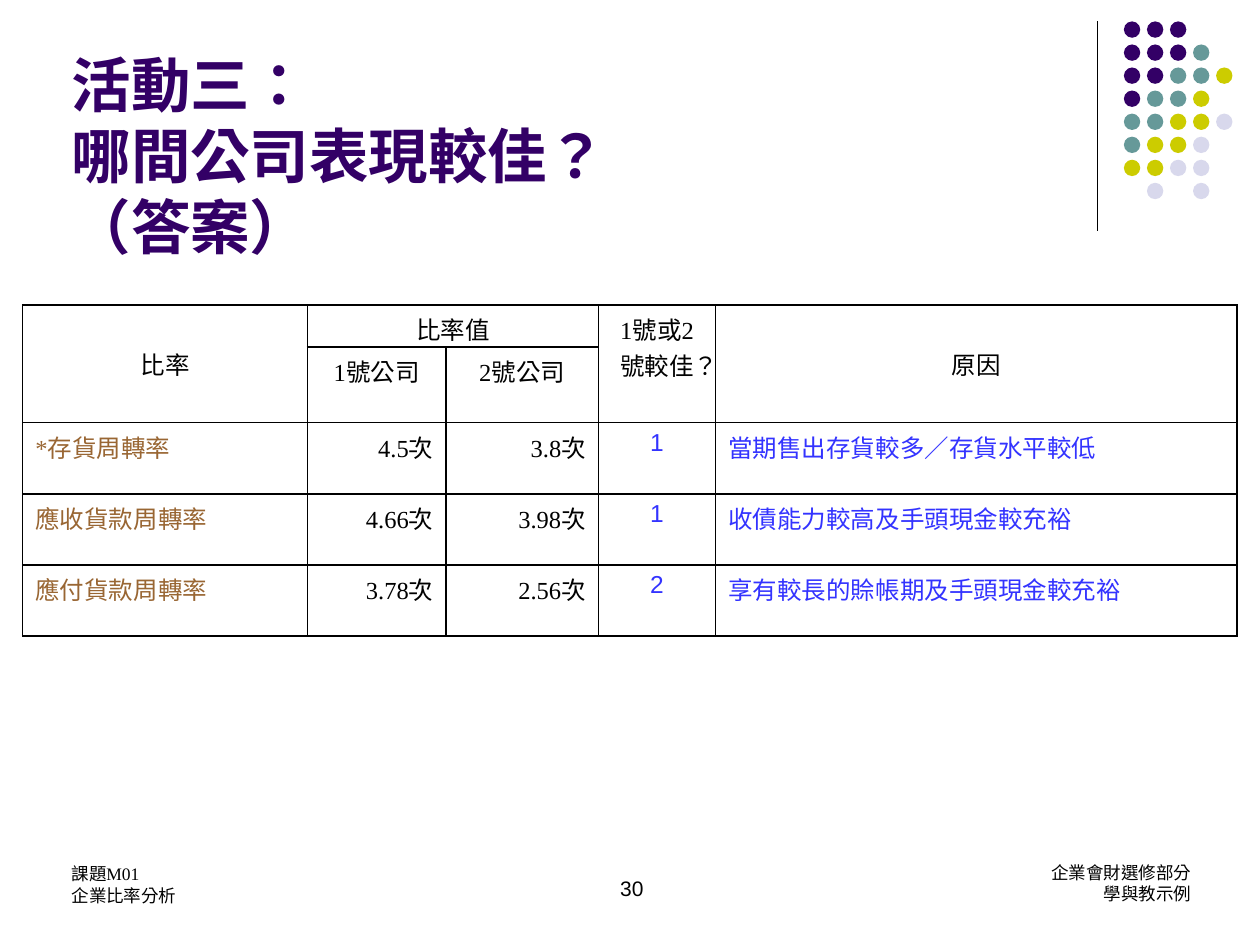
from lxml import etree
from pptx import Presentation
from pptx.dml.color import RGBColor
from pptx.enum.lang import MSO_LANGUAGE_ID
from pptx.enum.shapes import MSO_CONNECTOR, MSO_SHAPE
from pptx.enum.text import MSO_ANCHOR, PP_ALIGN
from pptx.oxml.ns import qn
from pptx.util import Inches, Pt

BLACK = RGBColor(0x00, 0x00, 0x00)
WHITE = RGBColor(0xFF, 0xFF, 0xFF)
PURPLE = RGBColor(0x33, 0x00, 0x66)
TEAL = RGBColor(0x66, 0x99, 0x99)
OLIVE = RGBColor(0xCC, 0xCC, 0x00)
LILAC = RGBColor(0xD8, 0xD8, 0xEC)
BROWN = RGBColor(0x99, 0x66, 0x33)
BLUE = RGBColor(0x33, 0x33, 0xFF)

LEFT, CENTER, RIGHT = PP_ALIGN.LEFT, PP_ALIGN.CENTER, PP_ALIGN.RIGHT
TOP, MIDDLE, BOTTOM = MSO_ANCHOR.TOP, MSO_ANCHOR.MIDDLE, MSO_ANCHOR.BOTTOM
CHINESE = MSO_LANGUAGE_ID.TRADITIONAL_CHINESE
SERIF, SANS, COMIC = "Times New Roman", "Arial", "Comic Neue"

# The slide is a grid of 100 columns by 75 rows
COLUMNS, ROWS = 100, 75


def write(frame, *paragraphs, size=14, font=SERIF, color=BLACK, bold=False,
          align=LEFT, line=None, before=None):
    """Each paragraph is a text or a list of (text, font) parts."""
    for index, content in enumerate(paragraphs):
        paragraph = frame.paragraphs[0] if index == 0 else frame.add_paragraph()
        paragraph.alignment = align
        if line:
            paragraph.line_spacing = Pt(line)
        if before:
            paragraph.space_before = Pt(before)
        parts = [(content, font)] if isinstance(content, str) else content
        for text, face in parts:
            run = paragraph.add_run()
            run.text = text
            run.font.name, run.font.size, run.font.bold = face, Pt(size), bold
            run.font.color.rgb = color
            run.font.language_id = CHINESE


class Deck:
    """Holds the grid, the common style and the current slide."""
    border_width = 1

    def __init__(self, width, height):
        self.file = Presentation()
        self.file.slide_width, self.file.slide_height = Inches(width), Inches(height)
        self.column = self.file.slide_width / COLUMNS
        self.row = self.file.slide_height / ROWS
        self.slide = self.file.slides.add_slide(self.file.slide_layouts[6])
        self.shapes = self.slide.shapes

    def place(self, x, y, w, h):
        return (round(x * self.column), round(y * self.row),
                round(w * self.column), round(h * self.row))

    def rule(self, x, top, bottom, color=BLACK, width=0.75):
        left, start, _, length = self.place(x, top, 0, bottom - top)
        rule = self.shapes.add_connector(
            MSO_CONNECTOR.STRAIGHT, left, start, left, start + length)
        rule.line.color.rgb, rule.line.width = color, Pt(width)
        etree.SubElement(rule._element.spPr, qn("a:effectLst"))

    def dot(self, x, y, size, color):
        dot = self.shapes.add_shape(MSO_SHAPE.OVAL, *self.place(x, y, size, size))
        dot.shadow.inherit = False
        dot.fill.solid()
        dot.fill.fore_color.rgb = color
        dot.line.fill.background()

    def text(self, box, *paragraphs, anchor=TOP, wrap=True, **style):
        frame = self.shapes.add_textbox(*self.place(*box)).text_frame
        frame.word_wrap, frame.vertical_anchor = wrap, anchor
        write(frame, *paragraphs, **style)

    def table(self, x, y, widths, heights):
        box = self.place(x, y, sum(widths), sum(heights))
        table = self.shapes.add_table(len(heights), len(widths), *box).table
        table.first_row = table.horz_banding = False
        for column, width in zip(table.columns, widths):
            column.width = round(width * self.column)
        for row, height in zip(table.rows, heights):
            row.height = round(height * self.row)
        for cell in table.iter_cells():
            self.border(cell)
            cell.fill.solid()
            cell.fill.fore_color.rgb = WHITE
        return table

    def border(self, cell):
        properties = cell._tc.get_or_add_tcPr()
        for side in ("a:lnL", "a:lnR", "a:lnT", "a:lnB"):
            edge = etree.SubElement(properties, qn(side), w=str(Pt(self.border_width)))
            fill = etree.SubElement(edge, qn("a:solidFill"))
            etree.SubElement(fill, qn("a:srgbClr"), val=str(BLACK))


def decorate(deck):
    deck.rule(87.1, 1.7, 18.3)
    colors = {"P": PURPLE, "T": TEAL, "O": OLIVE, "L": LILAC}
    pattern = ("PPP..", "PPPT.", "PPTTO", "PTTO.", "TTOOL", "TOOL.", "OOLL.", ".L.L.")
    for row, marks in enumerate(pattern):
        for column, mark in enumerate(marks):
            if mark in colors:
                deck.dot(89.2 + 1.83 * column, 1.7 + 1.83 * row, 1.3, colors[mark])


def add_ratios(deck):
    table = deck.table(1.8, 24.2, (22.6, 11, 12.1, 9.3, 41.4),
                       (3.3, 6, 5.65, 5.65, 5.65))

    # Headings: row, column, last row, last column, text, anchor, font
    headings = (
        (0, 0, 1, 0, "比率", MIDDLE, SANS),
        (0, 1, 0, 2, "比率值", TOP, SERIF),
        (0, 3, 1, 3, "1號或2號較佳？", TOP, SERIF),
        (0, 4, 1, 4, "原因", MIDDLE, SERIF),
        (1, 1, 1, 1, "1號公司", TOP, SERIF),
        (1, 2, 1, 2, "2號公司", TOP, SERIF),
    )
    for row, column, last_row, last_column, label, anchor, font in headings:
        heading = table.cell(row, column)
        if (row, column) != (last_row, last_column):
            heading.merge(table.cell(last_row, last_column))
        heading.vertical_anchor = anchor
        write(heading.text_frame, label, font=font, align=CENTER)

    # Ratios: name, value of each company, better company, reason
    ratios = (
        ([("*", SERIF), ("存貨周轉率", COMIC)], "4.5次", "3.8次", "1",
         [("當期售出存貨較多／存貨水平較低", SANS)]),
        ([("應收貨款", COMIC), ("周轉率", SERIF)], "4.66次", "3.98次", "1",
         [("收債能力較高及手頭現金較充裕", COMIC)]),
        ([("應付貨款", COMIC), ("周轉率", SERIF)], "3.78次", "2.56次", "2",
         [("享有較長的賒帳期及手頭現金較充裕", COMIC)]),
    )
    styles = (
        dict(color=BROWN),
        dict(align=RIGHT),
        dict(align=RIGHT),
        dict(align=CENTER, font=SANS, color=BLUE, before=2.8),
        dict(color=BLUE),
    )
    for row, ratio in enumerate(ratios, start=2):
        for column, (content, style) in enumerate(zip(ratio, styles)):
            write(table.cell(row, column).text_frame, content, **style)


def main():
    deck = Deck(10, 7.5)
    decorate(deck)

    # Footer
    footer = dict(size=10, line=12.2)
    deck.text((82.3, 67.9, 13.2, 6.1), "企業會財選修部分", "學與教示例",
              wrap=False, align=RIGHT, **footer)
    deck.text((4.7, 68, 35.4, 5), "課題M01", "企業比率分析", **footer)
    deck.text((34.3, 67, 31.7, 5), "30", size=12, font=SANS, align=CENTER, anchor=BOTTOM)

    add_ratios(deck)

    # Title
    deck.text((4.7, 7, 82.5, 14.2), "活動三：", "哪間公司表現較佳？", "（答案）",
              size=34, font=SANS, color=PURPLE, bold=True, anchor=BOTTOM, line=40.5)
    deck.file.save("out.pptx")


if __name__ == "__main__":
    main()
